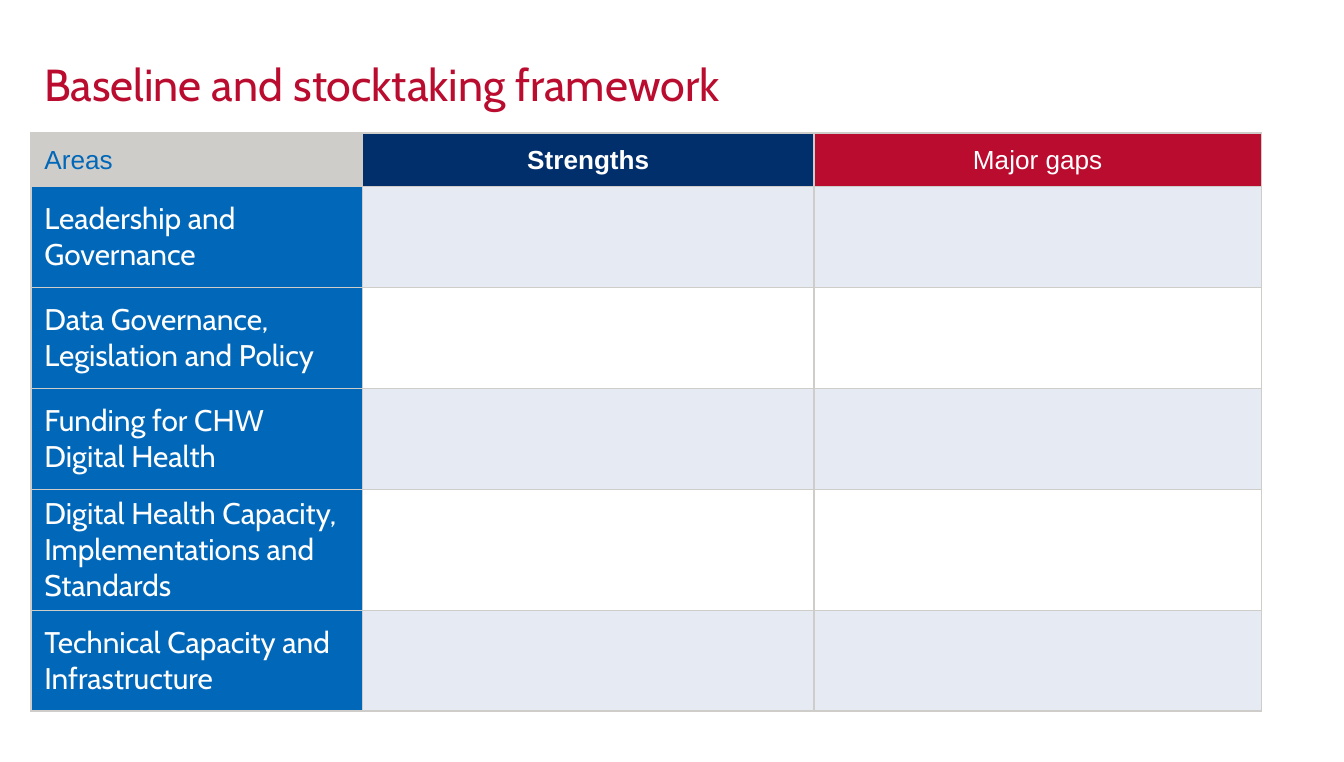
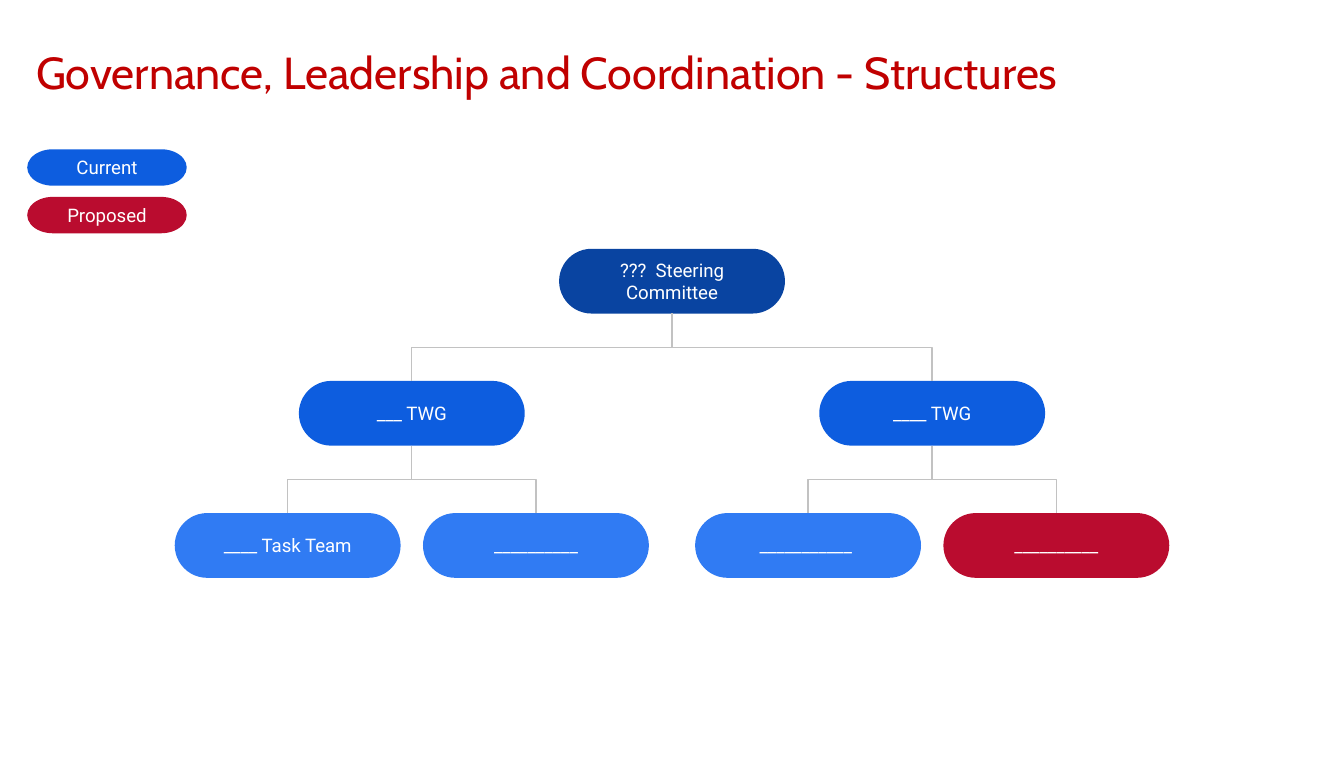
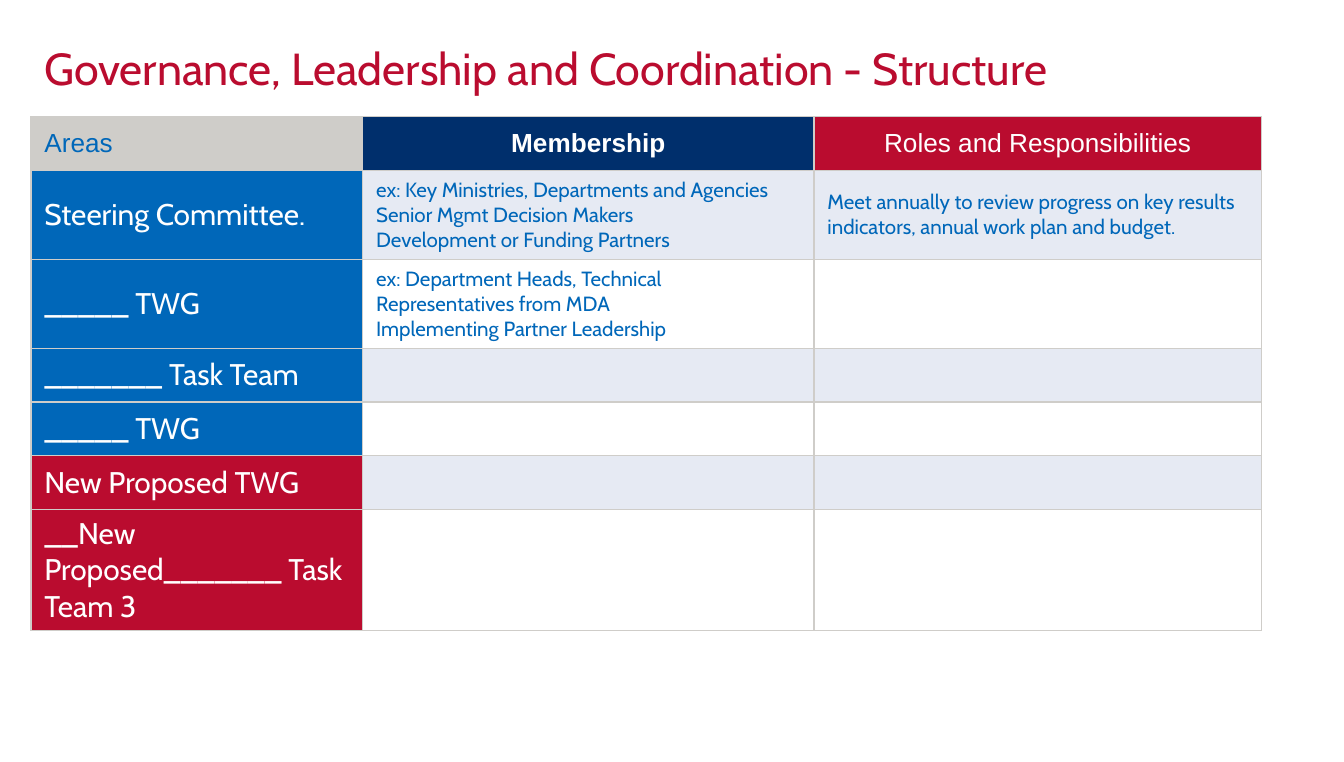
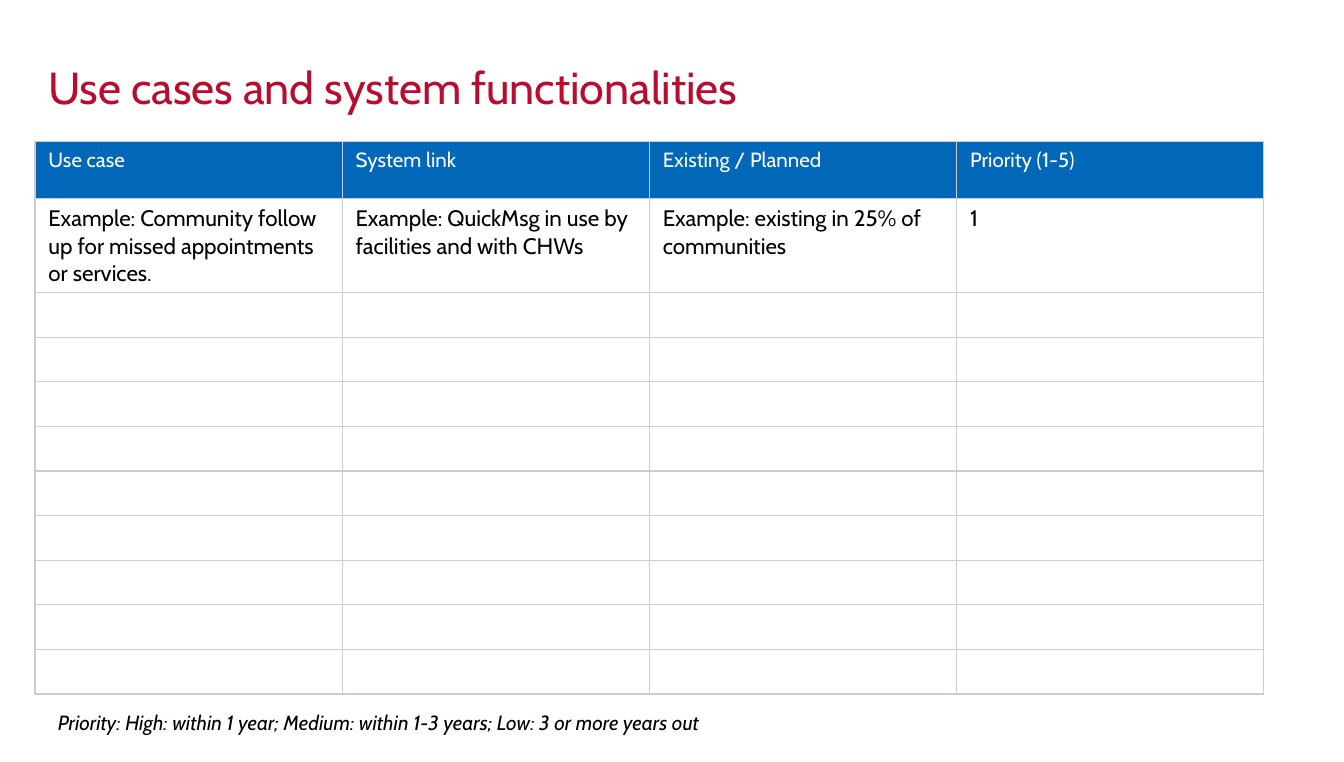
"""Builds four slides on digital health governance: three tables and a structure chart."""
from lxml import etree
from pptx import Presentation
from pptx import util as u
from pptx.dml.color import RGBColor
from pptx.enum import shapes, text
from pptx.oxml import ns

COLORS = {
    "red": "BA0C2F", "dark red": "C00000", "navy": "002F6C", "blue": "0067B9",
    "grey": "CFCDC9", "band": "E6EAF3", "white": "FFFFFF", "black": "000000",
    "deep": "0944A1", "royal": "0D5DDF", "sky": "307BF3", "line": "C2C2C2",
}
AREA_COLUMNS = (177.7, 241.8, 239.7)
DETAIL_HEIGHT = 47.6
NODE_WIDTH, NODE_HEIGHT = 121, 34.7
ROOT_X, ROOT_Y, LEVEL_STEP = 360, 133.3, 70.8
TWG_OFFSET, TEAM_OFFSET = 139.4, 66.5
TOP, MIDDLE, CENTER = text.MSO_ANCHOR.TOP, text.MSO_ANCHOR.MIDDLE, text.PP_ALIGN.CENTER


def rgb(color):
    """Return the named colour."""
    return RGBColor.from_string(COLORS[color])


def write(frame, words, size, color, font="Cabin", align=None, spacing=None, **styles):
    """Fill a text frame, one paragraph per line of words."""
    for index, line in enumerate(words.split("\n")):
        para = frame.add_paragraph() if index else frame.paragraphs[0]
        para.alignment, para.line_spacing = align, spacing
        span = para.add_run()
        span.text = line
        span.font.color.rgb = rgb(color)
        for name, value in {"name": font, "size": u.Pt(size), **styles}.items():
            setattr(span.font, name, value)


def set_layout(holder, anchor, across, down):
    """Set anchor and margins of a text frame or table cell."""
    settings = {
        "vertical_anchor": anchor,
        "margin_left": u.Pt(across), "margin_right": u.Pt(across),
        "margin_top": u.Pt(down), "margin_bottom": u.Pt(down),
    }
    for name, value in settings.items():
        setattr(holder, name, value)


def add_text(page, words, place, size=24, color="red", anchor=MIDDLE, margins=(7.2, 7.2), **styles):
    """Add a text box, by default in the title style."""
    box = page.shapes.add_textbox(*map(u.Pt, place))
    box.text_frame.word_wrap = True
    set_layout(box.text_frame, anchor, *margins)
    write(box.text_frame, words, size, color, **styles)


def add_title(page, words, left, top, **styles):
    """Add the slide title."""
    add_text(page, words, (left, top, 612, 36), **styles)


def add_pill(page, words, place, color, kind=shapes.MSO_SHAPE.ROUNDED_RECTANGLE):
    """Add a filled shape with fully rounded ends and a centred label."""
    pill = page.shapes.add_shape(kind, *map(u.Pt, place))
    if len(pill.adjustments):
        pill.adjustments[0] = 0.5
    pill.shadow.inherit = False
    pill.fill.solid()
    pill.fill.fore_color.rgb = rgb(color)
    pill.line.fill.background()
    pill.text_frame.word_wrap = True
    set_layout(pill.text_frame, MIDDLE, 7.2, 7.2)
    write(pill.text_frame, words, 10, "white", font="Roboto", align=CENTER)
    return pill


def add_node(page, words, center, level, color, parent=None):
    """Add a body to the structure chart and link it to its parent."""
    place = (center - NODE_WIDTH / 2, ROOT_Y + level * LEVEL_STEP, NODE_WIDTH, NODE_HEIGHT)
    node = add_pill(page, words, place, color)
    if parent is not None:
        add_branch(page, parent, node)
    return node


def add_branch(page, parent, child):
    """Link parent to child with an elbow that leaves downwards."""
    start_x, end_x = (box.left + box.width // 2 for box in (parent, child))
    start_y, end_y = parent.top + parent.height, child.top
    branch = page.shapes.add_connector(shapes.MSO_CONNECTOR.ELBOW, start_x, start_y, end_x, end_y)
    branch.begin_connect(parent, 2)
    branch.end_connect(child, 0)
    length, breadth = end_y - start_y, abs(end_x - start_x)
    frame = {
        "left": (start_x + end_x - length) // 2, "top": (start_y + end_y - breadth) // 2,
        "width": length, "height": breadth,
    }
    for name, value in frame.items():
        setattr(branch, name, value)
    turn = {"rot": 90, "flipH": False, "flipV": end_x > start_x}
    for name, value in turn.items():
        setattr(branch._element.spPr.xfrm, name, value)
    branch.line.color.rgb = rgb("line")
    branch.line.width = u.Pt(0.75)
    etree.SubElement(branch._element.spPr, ns.qn("a:effectLst"))


def add_grid(page, left, top, widths, heights):
    """Add a plain table and return it."""
    place = map(u.Pt, (left, top, sum(widths), sum(heights)))
    table = page.shapes.add_table(len(heights), len(widths), *place).table
    table.first_row = table.horz_banding = False
    for column, width in zip(table.columns, widths):
        column.width = u.Pt(width)
    for row, height in zip(table.rows, heights):
        row.height = u.Pt(height)
    return table


def fill_cell(cell, words, fill, size, color, anchor=MIDDLE, **styles):
    """Give a cell its borders, fill and text; an empty cell keeps only its text size."""
    for side in ("lnL", "lnR", "lnT", "lnB"):
        border = etree.SubElement(cell._tc.get_or_add_tcPr(), ns.qn(f"a:{side}"), w=str(u.Pt(0.75)))
        solid = etree.SubElement(border, ns.qn("a:solidFill"))
        etree.SubElement(solid, ns.qn("a:srgbClr"), val=COLORS["grey"])
    if fill:
        cell.fill.solid()
        cell.fill.fore_color.rgb = rgb(fill)
    else:
        cell.fill.background()
    set_layout(cell, anchor, 7.2, 3.6)
    if words:
        write(cell.text_frame, words, size, color, **styles)
    else:
        para = cell.text_frame.paragraphs[0]
        etree.SubElement(para._p, ns.qn("a:endParaRPr"), sz=str(size * 100))


def add_area_table(page, top, row_height, headings, rows, proposed=0):
    """Add a table of areas whose last proposed rows have red labels."""
    heights = [DETAIL_HEIGHT if len(row) > 1 else row_height for row in rows]
    table = add_grid(page, 16.6, top, AREA_COLUMNS, [28.8] + heights)
    looks = (
        ("grey", "blue", None, False),
        ("navy", "white", CENTER, True),
        ("red", "white", CENTER, False),
    )
    for column, (words, (fill, color, align, bold)) in enumerate(zip(headings, looks)):
        fill_cell(table.cell(0, column), words, fill, 14, color, font="Arial", align=align, bold=bold)
    for number, (area, *details) in enumerate(rows, 1):
        label_fill = "red" if number > len(rows) - proposed else "blue"
        fill_cell(table.cell(number, 0), area, label_fill, 16, "white", bold=False)
        for column in (1, 2):
            words = details[column - 1] if column <= len(details) else ""
            fill = "band" if number % 2 else "white"
            fill_cell(table.cell(number, column), words, fill, 11, "blue", bold=False)


def add_use_case_table(page, headings, example, empty_rows):
    """Add the use case table with one example and rows to fill in."""
    table = add_grid(page, 18.7, 75.6, [164.6] * 4, [30.7, 50.4] + [23.9] * empty_rows)
    for row, words in enumerate([headings, example] + [[""] * 4] * empty_rows):
        fill, size, color = (None, 12, "black") if row else ("blue", 11, "white")
        for column, entry in enumerate(words):
            fill_cell(table.cell(row, column), entry, fill, size, color, anchor=TOP, bold=False)


def build_baseline(page):
    """Build the stocktaking slide."""
    add_title(page, "Baseline and stocktaking framework", 16.6, 27)
    areas = (
        "Leadership and Governance",
        "Data Governance, Legislation and Policy",
        "Funding for CHW Digital Health",
        "Digital Health Capacity, Implementations and Standards",
        "Technical Capacity and Infrastructure",
    )
    add_area_table(page, 71.3, 54, ("Areas", "Strengths", "Major gaps"), [(area,) for area in areas])


def build_structures(page):
    """Build the structure chart slide."""
    add_title(page, "Governance, Leadership and Coordination - Structures", 19.4, 27.4,
              color="dark red", anchor=TOP, margins=(0, 0), spacing=0.9)
    for row, (words, color) in enumerate((("Current", "royal"), ("Proposed", "red"))):
        add_pill(page, words, (14.6, 80 + row * 25.5, 85.5, 19.5), color,
                 shapes.MSO_SHAPE.FLOWCHART_TERMINATOR)
    root = add_node(page, "???  Steering Committee", ROOT_X, 0, "deep")
    groups = (
        (-1, "___ TWG", (("____ Task Team", "sky"), ("__________", "sky"))),
        (1, "____ TWG", (("___________ ", "sky"), ("__________", "red"))),
    )
    for side, words, teams in groups:
        center = ROOT_X + side * TWG_OFFSET
        group = add_node(page, words, center, 1, "royal", root)
        for team_side, (team, color) in zip((-1, 1), teams):
            add_node(page, team, center + team_side * TEAM_OFFSET, 2, color, group)


def build_membership(page):
    """Build the membership and roles slide."""
    add_title(page, "Governance, Leadership and Coordination - Structure", 16.6, 18.3)
    rows = (
        ("Steering Committee.",
         "ex: Key Ministries, Departments and Agencies Senior Mgmt Decision Makers\n"
         "Development or Funding Partners",
         "Meet annually to review progress on key results indicators, annual work plan and budget."),
        ("_____ TWG",
         "ex: Department Heads, Technical Representatives from MDA\n"
         "Implementing Partner Leadership"),
        ("_______ Task Team",),
        ("_____ TWG",),
        ("New Proposed TWG",),
        ("__New Proposed_______ Task Team 3",),
    )
    headings = ("Areas", "Membership", "Roles and Responsibilities")
    add_area_table(page, 62.6, 28.8, headings, rows, proposed=2)


def build_use_cases(page):
    """Build the use case slide."""
    add_title(page, "Use cases and system functionalities", 18.7, 30.2, margins=(7.2, 3.6), spacing=0.9)
    add_text(page, "Priority: High: within 1 year; Medium: within 1-3 years; Low: 3 or more years out",
             (23.9, 376.6, 653, 20.6), size=11, color="black", anchor=TOP,
             margins=(7.2, 3.6), italic=True)
    add_use_case_table(
        page,
        ("Use case", "System link", "Existing / Planned", "Priority (1-5)"),
        ("Example: Community follow up for missed appointments or services.",
         "Example: QuickMsg in use by facilities and with CHWs",
         "Example: existing in 25% of communities", "1"),
        empty_rows=9,
    )


def main():
    """Build and save the deck."""
    deck = Presentation()
    deck.slide_width, deck.slide_height = u.Pt(720), u.Pt(408.24)
    for build in (build_baseline, build_structures, build_membership, build_use_cases):
        build(deck.slides.add_slide(deck.slide_layouts[6]))
    deck.save("out.pptx")


if __name__ == "__main__":
    main()
